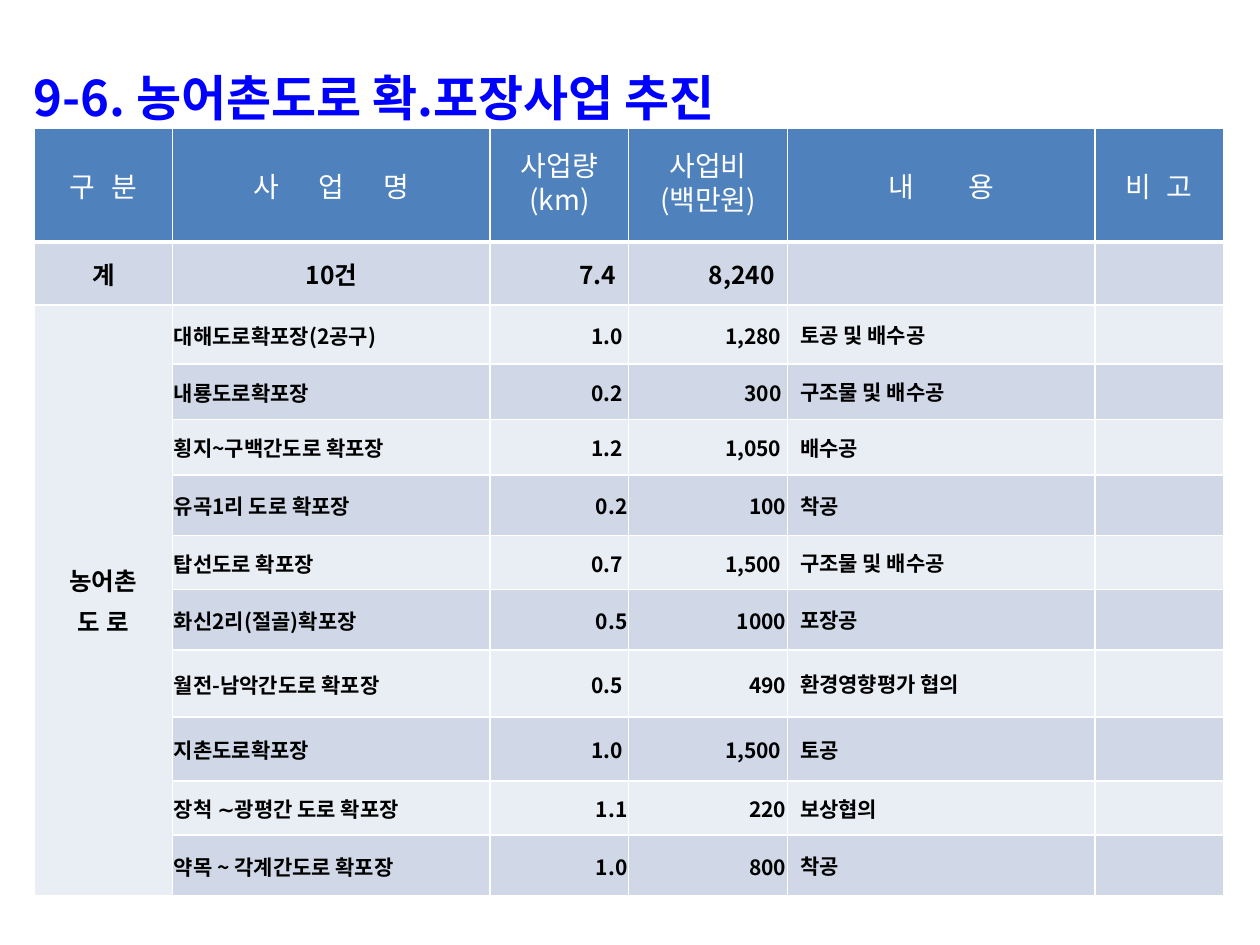
from dataclasses import dataclass

from lxml.etree import SubElement
from pptx import Presentation
from pptx.dml.color import RGBColor
from pptx.enum.text import MSO_ANCHOR as Anchor, PP_ALIGN as Align
from pptx.oxml.ns import qn
from pptx.slide import Slide
from pptx.util import Inches, Pt

BLUE = RGBColor(0x00, 0x00, 0xFF)
HEADER = RGBColor(0x4F, 0x81, 0xBD)
DARK_BAND = RGBColor(0xD0, 0xD8, 0xE8)
LIGHT_BAND = RGBColor(0xE9, 0xED, 0xF4)
WHITE = RGBColor(0xFF, 0xFF, 0xFF)
BLACK = RGBColor(0x00, 0x00, 0x00)

ROOMY = (0.1, 0.05, 0.1, 0.05)
TIGHT = (0.01, 0.01, 0.01, 0)
COLUMN_WIDTHS = (1.1, 2.52, 1.1, 1.26, 2.44, 1.02)
ROW_HEIGHTS = (0.9, 0.5, 0.47, 0.44, 0.44, 0.48, 0.43, 0.48, 0.53, 0.51, 0.43, 0.48)

HEADINGS = (
    ("구 분", 2.6),
    ("사 업 명", 9.4),
    ("사업량\n(km)", 0),
    ("사업비\n(백만원)", 0),
    ("내 용", 13.7),
    ("비 고", 2.6),
)
TOTALS = ("계", "10건", "7.4", "8,240", "", "")
PROJECTS = (
    ("대해도로확포장(2공구)", "1.0 ", "1,280 ", "토공 및 배수공"),
    ("내룡도로확포장", "0.2 ", "300 ", "구조물 및 배수공"),
    ("횡지~구백간도로 확포장", "1.2 ", "1,050 ", "배수공"),
    ("유곡1리 도로 확포장", "0.2", "100", "착공"),
    ("탑선도로 확포장", "0.7 ", "1,500 ", "구조물 및 배수공"),
    ("화신2리(절골)확포장", "0.5", "1000", "포장공"),
    ("월전-남악간도로 확포장", "0.5 ", "490", "환경영향평가 협의"),
    ("지촌도로확포장", "1.0 ", "1,500 ", "토공"),
    ("장척 ∼광평간 도로 확포장", "1.1", "220", "보상협의"),
    ("약목 ~ 각계간도로 확포장", "1.0", "800", "착공"),
)


@dataclass
class RoadSlide:
    """Draws the road project slide in one typeface."""

    slide: Slide
    typeface: str = "Noto Sans CJK KR"

    def style(self, paragraph, size, color, bold):
        font = paragraph.font
        font.name, font.size, font.bold = self.typeface, Pt(size), bold
        font.color.rgb = color
        defaults = paragraph._p.pPr.find(qn("a:defRPr"))
        SubElement(defaults, qn("a:ea"), typeface=self.typeface)

    def title(self, text, left, top, width, height):
        frame = self.slide.shapes.add_textbox(
            Inches(left), Inches(top), Inches(width), Inches(height)
        ).text_frame
        frame.word_wrap = True
        heading = frame.paragraphs[0]
        heading.text = text
        heading.line_spacing = 1.2
        self.style(heading, 28, BLUE, True)

    def table(self, left, top, widths, heights):
        grid = self.slide.shapes.add_table(
            len(heights), len(widths), Inches(left), Inches(top),
            Inches(sum(widths)), Inches(sum(heights)),
        ).table
        for column, width in zip(grid.columns, widths):
            column.width = Inches(width)
        for row, height in zip(grid.rows, heights):
            row.height = Inches(height)
        return grid

    def borders(self, cell, bottom):
        properties = cell._tc.get_or_add_tcPr()
        for index, (side, width) in enumerate(
            (("lnL", 1), ("lnR", 1), ("lnT", 1), ("lnB", bottom))
        ):
            line = SubElement(properties, qn(f"a:{side}"), w=str(Pt(width)))
            fill = SubElement(line, qn("a:solidFill"))
            SubElement(fill, qn("a:srgbClr"), val=str(WHITE))
            properties.insert(index, line)

    def cell(self, cell, text, fill, size, align=Align.CENTER, color=BLACK, bold=True,
             margins=ROOMY, tracking=0, line_spacing=None, bottom=1):
        cell.fill.solid()
        cell.fill.fore_color.rgb = fill
        self.borders(cell, bottom)
        cell.vertical_anchor = Anchor.MIDDLE
        (cell.margin_left, cell.margin_top,
         cell.margin_right, cell.margin_bottom) = map(Inches, margins)
        cell.text = text
        for paragraph in cell.text_frame.paragraphs:
            paragraph.alignment = align
            paragraph.line_spacing = line_spacing
            if margins == ROOMY:
                paragraph.space_before = Pt(size * 0.2)
            self.style(paragraph, size, color, bold)
            if tracking:
                spread = paragraph.runs[0]
                spread.text = text[:-1]
                spread.font._element.set("spc", str(round(tracking * 100)))
                paragraph.add_run().text = text[-1]


def main():
    deck = Presentation()
    deck.slide_width, deck.slide_height = Inches(10), Inches(7.5)
    page = RoadSlide(deck.slides.add_slide(deck.slide_layouts[6]))
    page.title("9-6. 농어촌도로 확.포장사업 추진", 0.17, 0.39, 9.76, 0.63)
    grid = page.table(0.27, 1.02, COLUMN_WIDTHS, ROW_HEIGHTS)

    for column, (heading, tracking) in enumerate(HEADINGS):
        page.cell(grid.cell(0, column), heading, HEADER, 16, color=WHITE, bold=False,
                  tracking=tracking, bottom=3,
                  line_spacing=0.7 if "\n" in heading else None)

    for column, total in enumerate(TOTALS):
        page.cell(grid.cell(1, column), total, DARK_BAND, 14,
                  Align.RIGHT if column in (2, 3) else Align.CENTER)

    grid.cell(2, 0).merge(grid.cell(len(ROW_HEIGHTS) - 1, 0))
    page.cell(grid.cell(2, 0), "농어촌\n도 로", LIGHT_BAND, 14)

    layouts = (
        (Align.LEFT, TIGHT),
        (Align.RIGHT, TIGHT),
        (Align.RIGHT, TIGHT),
        (Align.LEFT, ROOMY),
        (Align.LEFT, ROOMY),
    )
    for row, project in enumerate(PROJECTS, start=2):
        band = DARK_BAND if row % 2 else LIGHT_BAND
        for column, (text, (align, margins)) in enumerate(
            zip((*project, ""), layouts), start=1
        ):
            page.cell(grid.cell(row, column), text, band, 12, align, margins=margins)

    deck.save("out.pptx")


if __name__ == "__main__":
    main()
